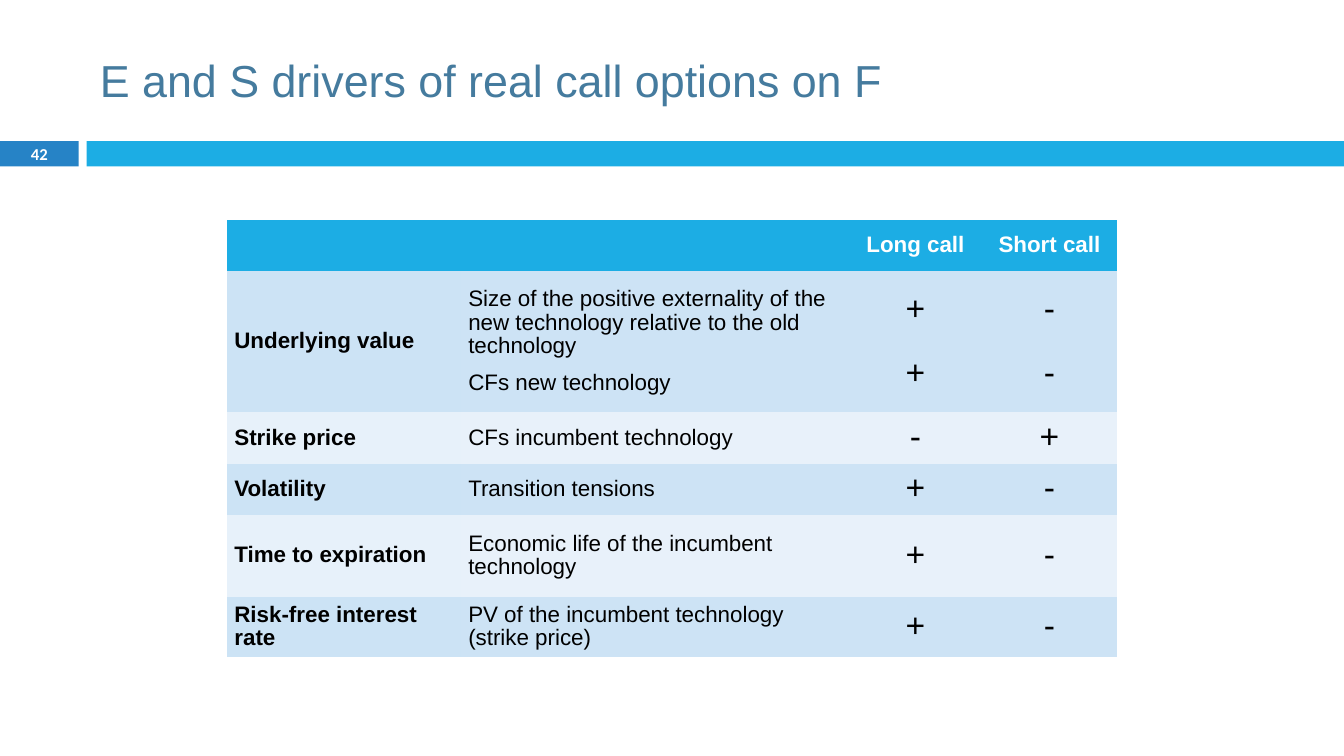
from dataclasses import dataclass

from pptx import Presentation
from pptx.dml.color import RGBColor
from pptx.enum.shapes import MSO_SHAPE
from pptx.enum.text import MSO_ANCHOR, PP_ALIGN
from pptx.oxml.ns import qn
from pptx.util import Inches, Pt

RECT = MSO_SHAPE.RECTANGLE
MIDDLE = MSO_ANCHOR.MIDDLE
LEFT, CENTER = PP_ALIGN.LEFT, PP_ALIGN.CENTER
PLAIN_TABLE = "{2D5ABB26-0587-4C30-8999-92F81FD0307C}"


@dataclass(frozen=True)
class Theme:
    """Colours, fonts and type sizes of the slide."""
    accent: str = "1CADE4"
    number_fill: str = "2683C6"
    title: str = "457B9E"
    text: str = "000000"
    inverse: str = "FFFFFF"
    label_bands: tuple = ("CCE3F5", "E7F1FA")
    bands: tuple = ("CDE3F5", "E8F1FA")
    font: str = "Arial"
    number_font: str = "Calibri"
    title_size: float = 32
    body_size: float = 16
    mark_size: float = 24
    number_size: float = 11.9
    gap: float = 4.8
    mark_gap: float = 16
    line_spacing: float = 0.95


THEME = Theme()
COLUMNS = (2.32, 3.84, 1.33, 1.33)
ROWS = (0.51, 1.4, 0.51, 0.51, 0.81, 0.6)
HEADINGS = ("Long call", "Short call")
DRIVERS = (
    ("Underlying value",
     ("Size of the positive externality of the new technology relative to the old technology",
      "CFs new technology"), "++", "--"),
    ("Strike price", ("CFs incumbent technology",), "-", "+"),
    ("Volatility", ("Transition tensions",), "+", "-"),
    ("Time to expiration", ("Economic life of the incumbent technology",), "+", "-"),
    ("Risk-free interest rate", ("PV of the incumbent technology (strike price)",), "+", "-"),
)


def add_run(p, text, size, color, bold=False, font=THEME.font):
    """Add one formatted run to a paragraph."""
    r = p.add_run()
    r.text = text
    r.font.name, r.font.size, r.font.bold = font, Pt(size), bold
    r.font.color.rgb = RGBColor.from_string(color)


def add_bar(s, left, top, width, height, color):
    """Draw a flat bar without outline."""
    sp = s.shapes.add_shape(RECT, Inches(left), Inches(top), Inches(width), Inches(height))
    sp.shadow.inherit = False
    sp.fill.solid()
    sp.fill.fore_color.rgb = RGBColor.from_string(color)
    sp.line.fill.background()
    return sp


def add_title(s, left, top, width, height, text):
    """Place the title placeholder in its box."""
    sp = s.shapes.title
    sp.left, sp.top, sp.width, sp.height = map(Inches, (left, top, width, height))
    tf = sp.text_frame
    tf.vertical_anchor = MIDDLE
    p = tf.paragraphs[0]
    p.alignment = LEFT
    add_run(p, text, THEME.title_size, THEME.title)


def add_band(s, left, top, width, height, number):
    """Draw the numbered band below the title."""
    number_width, gutter = 0.78, 0.08
    sp = add_bar(s, left, top, number_width, height, THEME.number_fill)
    offset = number_width + gutter
    add_bar(s, left + offset, top, width - offset, height, THEME.accent)
    tf = sp.text_frame
    tf.margin_top = tf.margin_bottom = 0
    tf.vertical_anchor = MIDDLE
    p = tf.paragraphs[0]
    p.alignment = CENTER
    add_run(p, number, THEME.number_size, THEME.inverse, True, THEME.number_font)


def fill_cell(cell, lines, fill, size=THEME.body_size, color=THEME.text,
              bold=False, align=LEFT, gap=THEME.gap):
    """Fill one table cell with a paragraph per line."""
    cell.fill.solid()
    cell.fill.fore_color.rgb = RGBColor.from_string(fill)
    cell.vertical_anchor = MIDDLE
    cell.margin_left = cell.margin_right = Inches(0.07)
    cell.margin_top = cell.margin_bottom = 0
    tf = cell.text_frame
    for i, line in enumerate(lines):
        p = tf.add_paragraph() if i else tf.paragraphs[0]
        p.alignment = align
        p.line_spacing = THEME.line_spacing
        p.space_before, p.space_after = Pt(gap), Pt(THEME.gap)
        add_run(p, line, size, color, bold)


def add_driver_table(s, left, top):
    """Build the table of option value drivers."""
    frame = s.shapes.add_table(len(ROWS), len(COLUMNS), Inches(left), Inches(top),
                               Inches(sum(COLUMNS)), Inches(sum(ROWS)))
    table = frame.table
    table._tbl.tblPr.find(qn("a:tableStyleId")).text = PLAIN_TABLE
    for column, width in zip(table.columns, COLUMNS):
        column.width = Inches(width)
    for row, height in zip(table.rows, ROWS):
        row.height = Inches(height)
    for j, heading in enumerate(("", "") + HEADINGS):
        fill_cell(table.cell(0, j), [heading] if heading else [], THEME.accent,
                  color=THEME.inverse, bold=True, align=CENTER)
    table.cell(0, 0).merge(table.cell(0, 1))
    for i, (label, drivers, *marks) in enumerate(DRIVERS):
        band = THEME.bands[i % 2]
        fill_cell(table.cell(i + 1, 0), [label], THEME.label_bands[i % 2], bold=True)
        fill_cell(table.cell(i + 1, 1), drivers, band)
        for j, signs in enumerate(marks, 2):
            gap = THEME.mark_gap if len(signs) > 1 else THEME.gap
            fill_cell(table.cell(i + 1, j), signs, band, THEME.mark_size, align=CENTER, gap=gap)


def main():
    """Build and save the slide."""
    prs = Presentation()
    width, height = 13.33, 7.5
    prs.slide_width, prs.slide_height = Inches(width), Inches(height)
    s = prs.slides.add_slide(prs.slide_layouts[5])
    add_band(s, 0, 1.4, width, 0.25, "42")
    add_title(s, 0.89, 0.25, 11.89, 1.08, "E and S drivers of real call options on F")
    add_driver_table(s, (width - sum(COLUMNS)) / 2, 2.18)
    prs.save("out.pptx")


if __name__ == "__main__":
    main()
